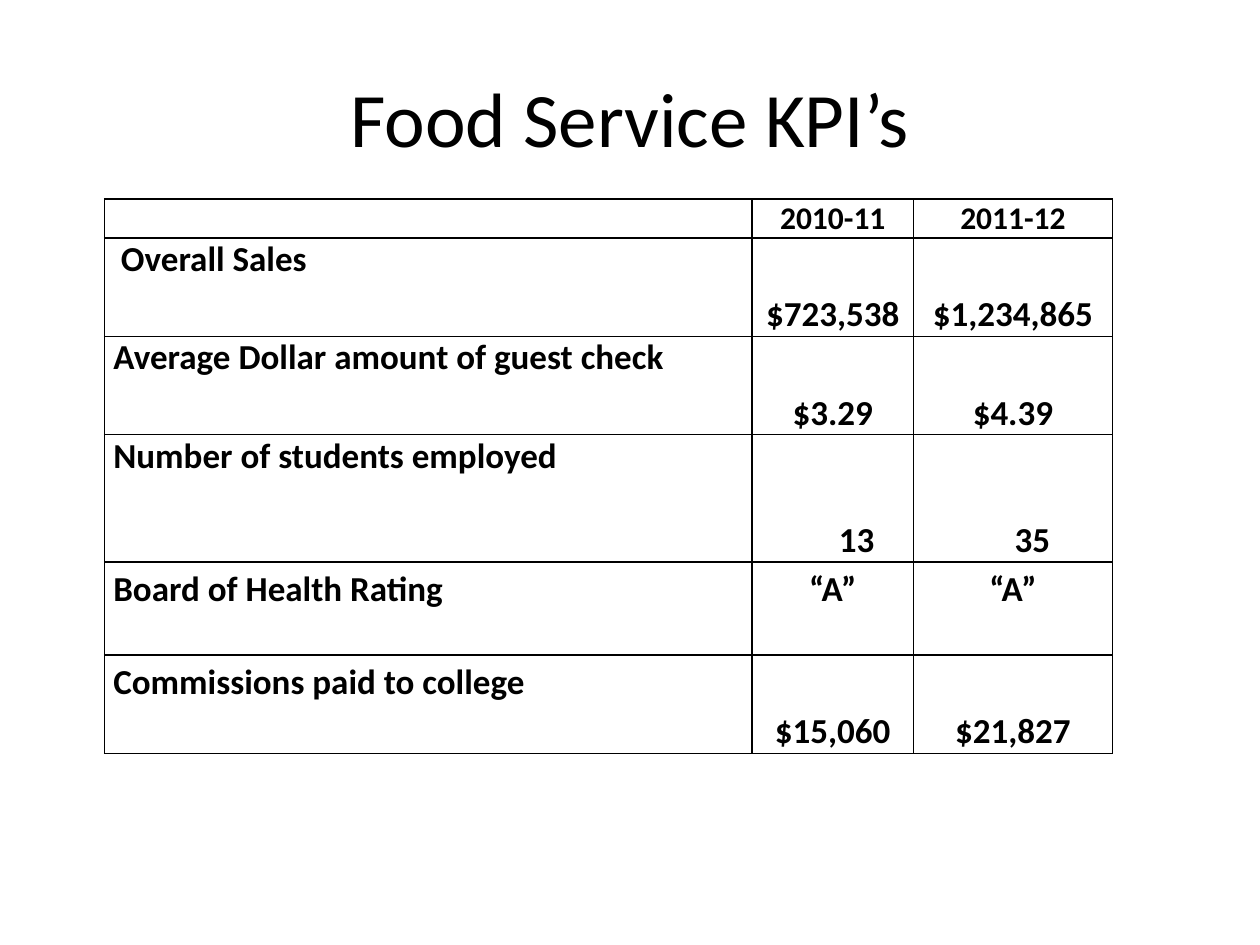
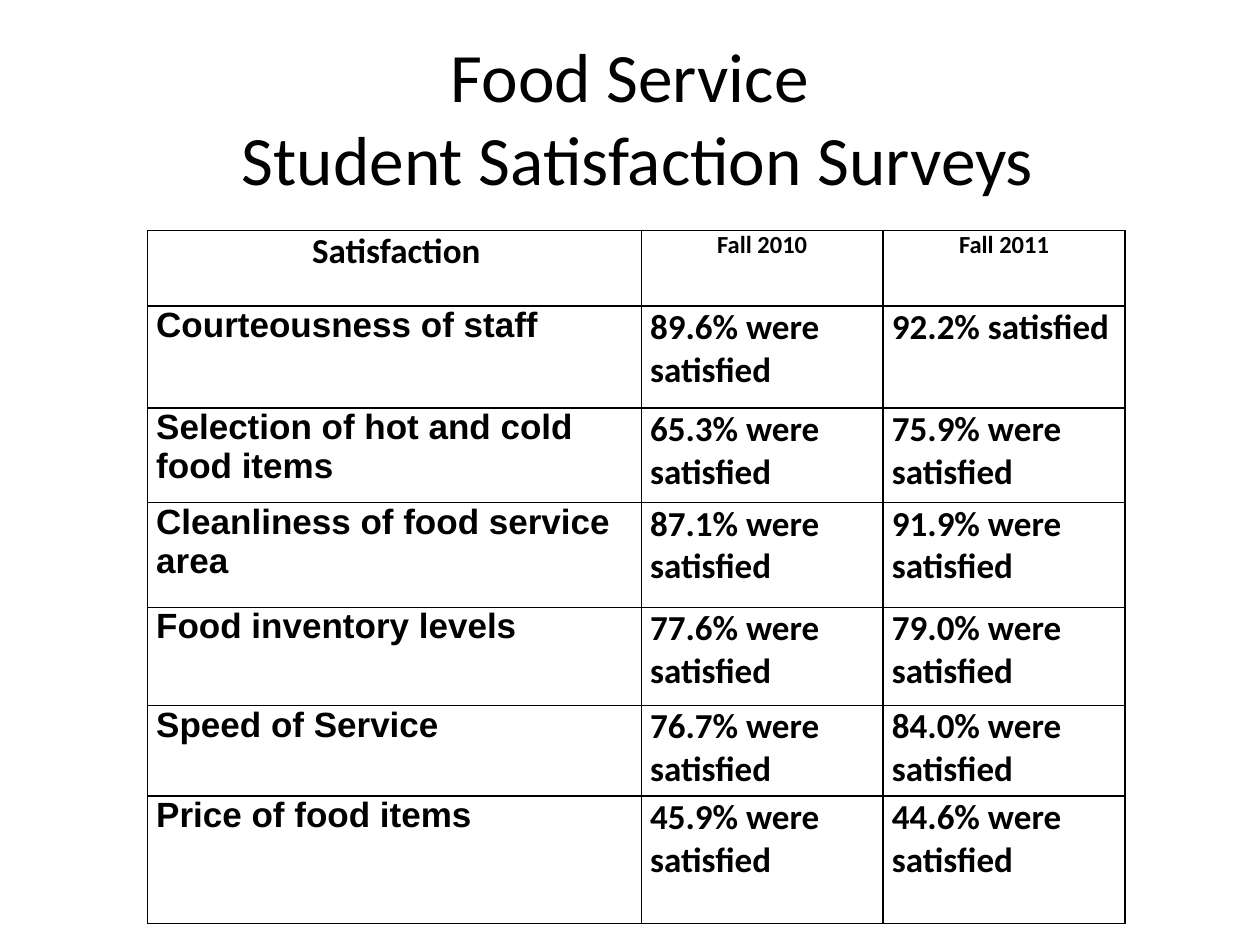
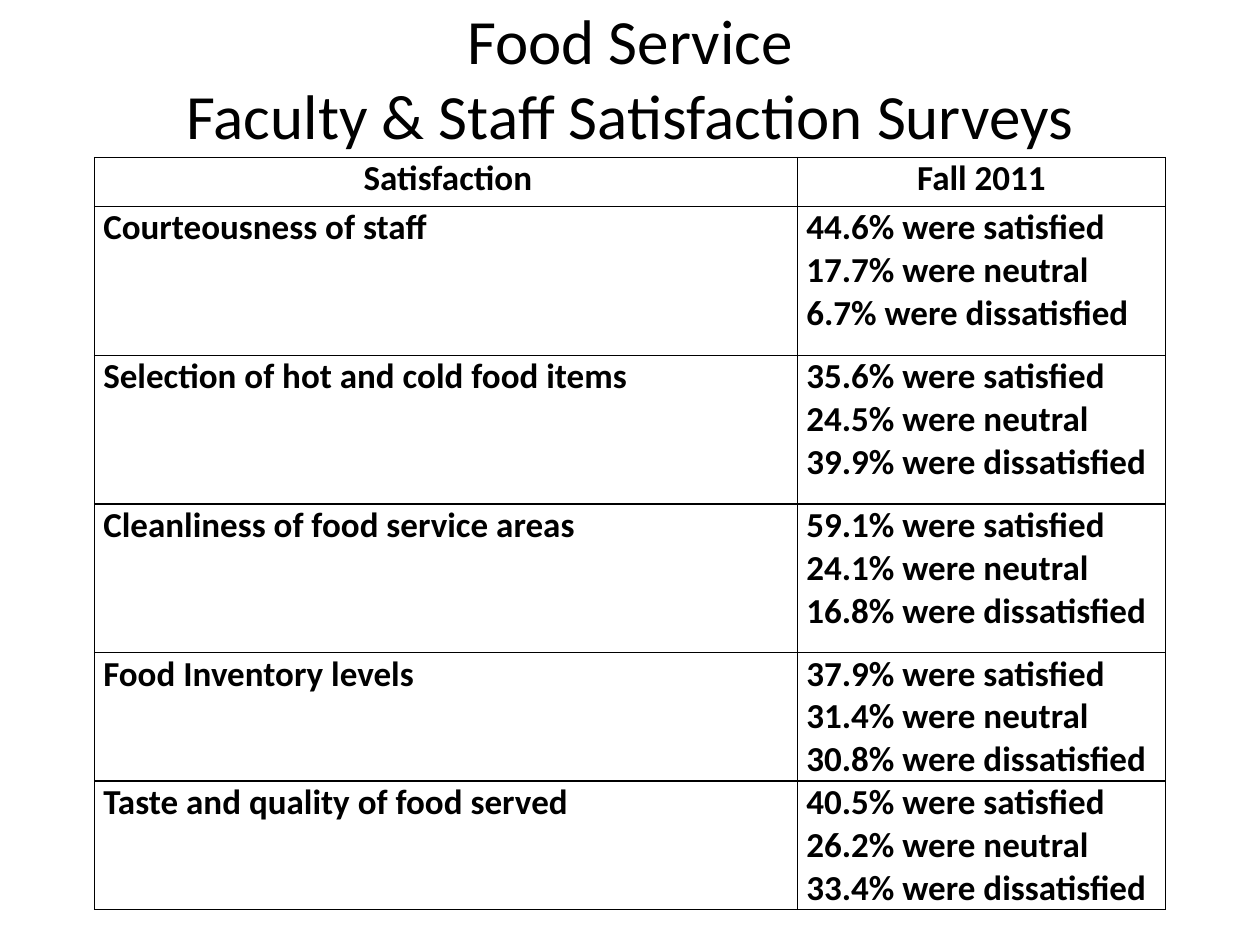
from dataclasses import dataclass, replace

from lxml import etree
from pptx import Presentation
from pptx.dml.color import RGBColor
from pptx.enum.text import MSO_ANCHOR as Anchor, PP_ALIGN as Align
from pptx.oxml.ns import qn
from pptx.util import Inches, Pt


@dataclass(frozen=True)
class Theme:
    ink: RGBColor = RGBColor(0, 0, 0)
    font: str = "Calibri"
    label_font: str = "Arial"
    body_size: float = 20
    year_size: float = 18
    term_size: float = 14
    border_width: float = 1
    cell_inset: float = 0.07


THEME = Theme()


@dataclass(frozen=True)
class CellStyle:
    size: float = THEME.body_size
    font: str = THEME.font
    align: Align = Align.LEFT
    anchor: Anchor = Anchor.TOP
    spacing: float = 1.0
    indent: float = 0


LABEL = CellStyle()
ARIAL_LABEL = replace(LABEL, font=THEME.label_font)
LOOSE_LABEL = replace(LABEL, spacing=1.15)
HEADING = CellStyle(align=Align.CENTER)
FIRST_HEADING = replace(HEADING, indent=0.03)
YEAR = replace(HEADING, size=THEME.year_size)
TERM = replace(HEADING, size=THEME.term_size)
RATING = replace(HEADING, spacing=1.15)
FIGURE = replace(RATING, anchor=Anchor.BOTTOM)


def set_font(para, name, size, bold=False):
    font = para.font
    font.name, font.size, font.bold = name, Pt(size), bold
    font.color.rgb = THEME.ink


def add_title(page, text, size, height=1.25):
    box = page.shapes.add_textbox(Inches(0.5), Inches(0.3), Inches(9), Inches(height))
    frame = box.text_frame
    frame.word_wrap = True
    frame.vertical_anchor = Anchor.MIDDLE
    para = frame.paragraphs[0]
    para.text = text
    para.alignment = Align.CENTER
    set_font(para, THEME.font, size)


def outline_cell(cell):
    """Draw the four borders, which must stand before the fill."""
    props = cell._tc.get_or_add_tcPr()
    for place, side in enumerate(("lnL", "lnR", "lnT", "lnB")):
        line = etree.Element(qn(f"a:{side}"), w=str(Pt(THEME.border_width)))
        fill = etree.SubElement(line, qn("a:solidFill"))
        etree.SubElement(fill, qn("a:srgbClr"), val=str(THEME.ink))
        props.insert(place, line)


def write_cell(cell, text, style):
    cell.fill.background()
    outline_cell(cell)
    cell.margin_left = Inches(THEME.cell_inset + style.indent)
    cell.margin_right = Inches(THEME.cell_inset)
    cell.margin_top = cell.margin_bottom = 0
    cell.vertical_anchor = style.anchor
    cell.text_frame.text = text
    for para in cell.text_frame.paragraphs:
        para.alignment = style.align
        para.line_spacing = style.spacing
        set_font(para, style.font, style.size, bold=True)


def add_grid(page, left, top, widths, heights, rows):
    """Add a table; each row is a list of (text, style) pairs."""
    frame = page.shapes.add_table(
        len(heights), len(widths), Inches(left), Inches(top),
        Inches(sum(widths)), Inches(sum(heights)))
    table = frame.table
    table.first_row = table.horz_banding = False
    for column, width in zip(table.columns, widths):
        column.width = Inches(width)
    for table_row, height, row in zip(table.rows, heights, rows):
        table_row.height = Inches(height)
        for cell, (text, style) in zip(table_row.cells, row):
            write_cell(cell, text, style)


def add_kpi_page(page):
    add_title(page, "Food Service KPI’s", 44)
    rows = [
        [("", YEAR), ("2010-11", YEAR), ("2011-12", YEAR)],
        [("Overall Sales", replace(LABEL, indent=0.06)),
         ("$723,538", FIGURE), ("$1,234,865", FIGURE)],
        [("Average Dollar amount of guest check", LABEL),
         ("$3.29", FIGURE), ("$4.39", FIGURE)],
        [("Number of students employed", LABEL),
         ("13", replace(FIGURE, indent=0.38)), ("35", replace(FIGURE, indent=0.31))],
        [("Board of Health Rating", LOOSE_LABEL), ("“A”", RATING), ("“A”", RATING)],
        [("Commissions paid to college", LOOSE_LABEL),
         ("$15,060", FIGURE), ("$21,827", FIGURE)],
    ]
    add_grid(page, 0.83, 1.58, [5.14, 1.28, 1.58],
             [0.31, 0.78, 0.78, 1.01, 0.74, 0.78], rows)


def add_student_page(page):
    add_title(page, "Food Service\v Student Satisfaction Surveys", 39.6)
    answers = [
        ("Courteousness of staff", "89.6% were satisfied", "92.2% satisfied"),
        ("Selection of hot and cold food items", "65.3% were satisfied", "75.9% were satisfied"),
        ("Cleanliness of food service area", "87.1% were satisfied", "91.9% were satisfied"),
        ("Food inventory levels", "77.6% were satisfied", "79.0% were satisfied"),
        ("Speed of Service", "76.7% were satisfied", "84.0% were satisfied"),
        ("Price of food items", "45.9% were satisfied", "44.6% were satisfied"),
    ]
    rows = [[("Satisfaction", FIRST_HEADING), ("Fall 2010", TERM), ("Fall 2011", TERM)]]
    rows += [[(topic, ARIAL_LABEL), (before, LABEL), (after, LABEL)]
             for topic, before, after in answers]
    add_grid(page, 1.17, 1.83, [3.92, 1.92, 1.92],
             [0.6, 0.81, 0.75, 0.83, 0.78, 0.72, 1.01], rows)


def add_faculty_page(page):
    add_title(page, "Food Service\vFaculty & Staff Satisfaction Surveys", 36, height=0.62)
    shares = [
        ("Courteousness of staff", 44.6, 17.7, 6.7),
        ("Selection of hot and cold food items", 35.6, 24.5, 39.9),
        ("Cleanliness of food service areas", 59.1, 24.1, 16.8),
        ("Food Inventory levels", 37.9, 31.4, 30.8),
        ("Taste and quality of food served", 40.5, 26.2, 33.4),
    ]
    moods = ("satisfied", "neutral", "dissatisfied")
    rows = [[("Satisfaction", FIRST_HEADING), ("Fall 2011", HEADING)]]
    for topic, *values in shares:
        lines = [f"{value}% were {mood}" for value, mood in zip(values, moods)]
        rows.append([(topic, LABEL), ("\n".join(lines), LABEL)])
    add_grid(page, 0.75, 1.25, [5.58, 2.92], [0.39] + [1.18] * 3 + [1.02] * 2, rows)


def main():
    deck = Presentation()
    deck.slide_width, deck.slide_height = Inches(10), Inches(7.5)
    blank = deck.slide_layouts[6]
    for fill_page in (add_kpi_page, add_student_page, add_faculty_page):
        fill_page(deck.slides.add_slide(blank))
    deck.save("out.pptx")


if __name__ == "__main__":
    main()
